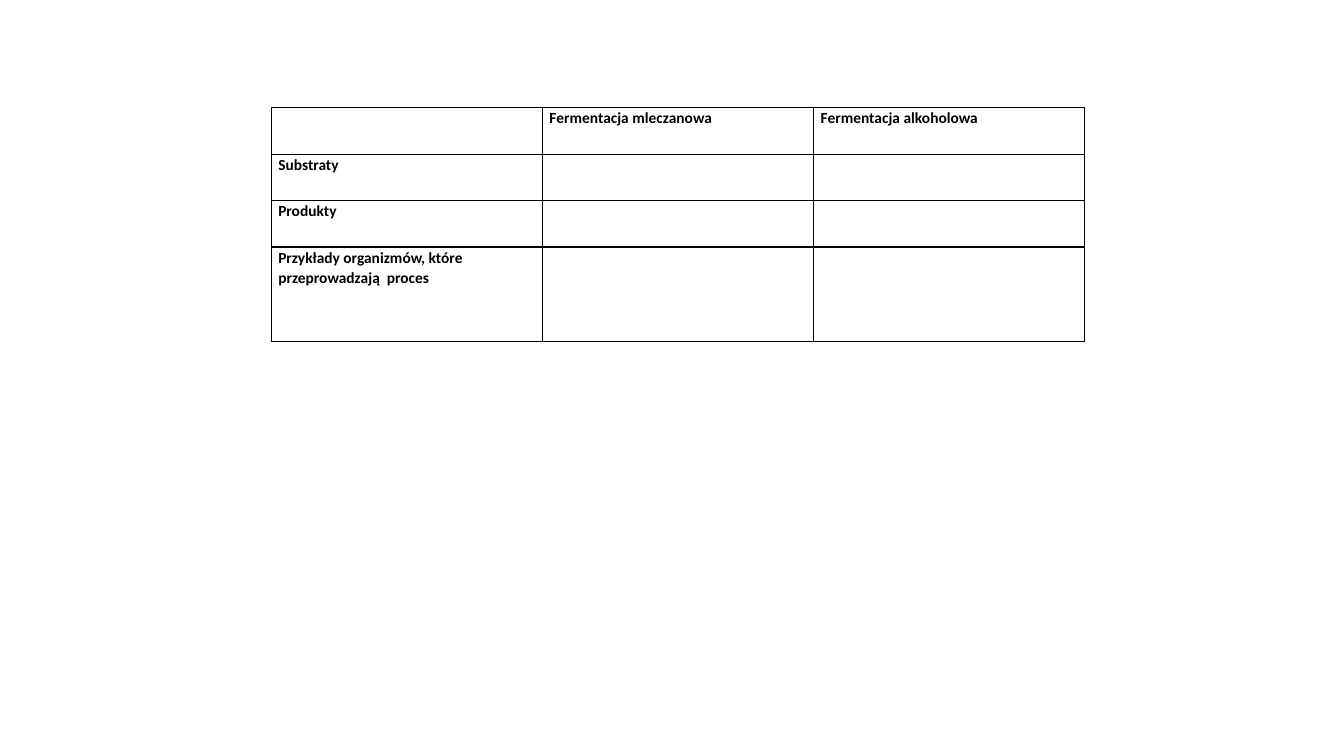
from lxml.etree import SubElement as Sub
from pptx import Presentation
from pptx.dml.color import RGBColor as RGB
from pptx.oxml.ns import qn
from pptx.util import Inches, Pt

ROWS = [
    ("", "Fermentacja mleczanowa", "Fermentacja alkoholowa"),
    ("Substraty", "", ""),
    ("Produkty", "", ""),
    ("Przykłady organizmów, które  przeprowadzają  proces", "", ""),
]
TALL = [0.46, 0.46, 0.46, 0.94]
LEFT, TOP, WIDE = 2.69, 1.07, 2.69
HUES = {"ink": "000000"}


def write(cell, text, size=11, font="Calibri", hue="ink", bold=True):
    cell.margin_left = cell.margin_right = Inches(0.07)
    cell.margin_top = cell.margin_bottom = 0
    para = cell.text_frame.paragraphs[0]
    para.line_spacing = 1.07
    para.space_after = Pt(8)
    para.font.size = Pt(size)
    if text:
        run = para.add_run()
        run.text = text
        run.font.size = Pt(size)
        run.font.name = font
        run.font.bold = bold
        run.font.color.rgb = RGB.from_string(HUES[hue])


def frame(cell, hue="ink", width=1):
    props = cell._tc.get_or_add_tcPr()
    for side in ("lnL", "lnR", "lnT", "lnB"):
        line = Sub(props, qn(f"a:{side}"), w=str(Pt(width)))
        fill = Sub(line, qn("a:solidFill"))
        Sub(fill, qn("a:srgbClr"), val=HUES[hue])
    cell.fill.background()


def main():
    deck = Presentation()
    deck.slide_width, deck.slide_height = Inches(13.33), Inches(7.5)
    slide = deck.slides.add_slide(deck.slide_layouts[6])
    count = len(ROWS[0])
    grid = slide.shapes.add_table(
        len(ROWS), count, Inches(LEFT), Inches(TOP),
        Inches(WIDE * count), Inches(sum(TALL))).table
    grid.first_row = grid.horz_banding = False
    for col in grid.columns:
        col.width = Inches(WIDE)
    for row, tall, texts in zip(grid.rows, TALL, ROWS):
        row.height = Inches(tall)
        for cell, text in zip(row.cells, texts):
            write(cell, text)
            frame(cell)
    deck.save("out.pptx")


if __name__ == "__main__":
    main()
